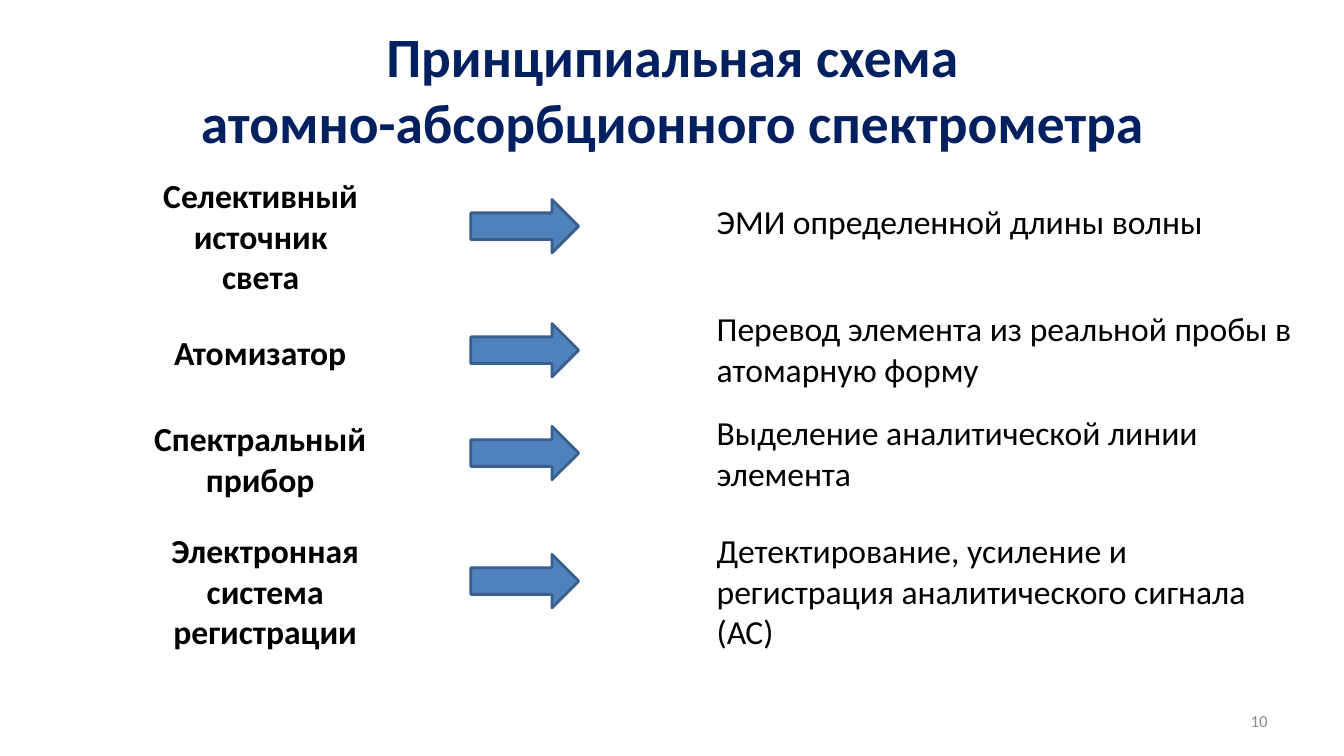
from dataclasses import dataclass

from pptx import Presentation
from pptx.dml.color import RGBColor
from pptx.enum.shapes import MSO_SHAPE
from pptx.enum.text import MSO_ANCHOR, MSO_AUTO_SIZE, PP_ALIGN
from pptx.util import Inches, Pt


@dataclass(frozen=True)
class Theme:
    font: str = "Calibri"
    heading: RGBColor = RGBColor(0x00, 0x20, 0x60)
    text: RGBColor = RGBColor(0x00, 0x00, 0x00)
    muted: RGBColor = RGBColor(0x8C, 0x8C, 0x8C)
    arrow_fill: RGBColor = RGBColor(0x4F, 0x81, 0xBD)
    arrow_line: RGBColor = RGBColor(0x3A, 0x5F, 0x8C)
    title_size: float = 39.6
    body_size: float = 24
    number_size: float = 12


THEME = Theme()

ARROW_LEFT, ARROW_WIDTH, ARROW_HEIGHT = 4.67, 1.07, 0.53
PURPOSE_LEFT = 7.01

# Each row: stage (text, left, top, width, height), arrow top,
# purpose (text, top, width, height, wrap)
STAGES = [
    (("Селективный источник света", 1.42, 1.69, 2.33, 1.31), 1.98,
     ("ЭМИ определенной длины волны", 1.94, 5.07, 0.5, False)),
    (("Атомизатор", 1.37, 3.24, 2.42, 0.5), 3.21,
     ("Перевод элемента из реальной пробы в атомарную форму",
      3.01, 6.04, 0.91, True)),
    (("Спектральный прибор", 1.32, 4.1, 2.52, 0.91), 4.23,
     ("Выделение аналитической линии элемента", 4.04, 5.47, 0.91, True)),
    (("Электронная система регистрации", 1.49, 5.21, 2.28, 1.31), 5.5,
     ("Детектирование, усиление и регистрация аналитического сигнала (АС)",
      5.21, 5.47, 1.31, True)),
]


def style(paragraph, size, color, bold=False, align=PP_ALIGN.LEFT):
    paragraph.alignment = align
    font = paragraph.font
    font.name, font.size, font.bold = THEME.font, Pt(size), bold
    font.color.rgb = color


def set_title(slide, text):
    title = slide.shapes.title
    title.left, title.top = Inches(0.67), Inches(0.25)
    title.width, title.height = Inches(12), Inches(1.25)
    frame = title.text_frame
    frame.text = text
    frame.auto_size = MSO_AUTO_SIZE.NONE
    frame.vertical_anchor = MSO_ANCHOR.MIDDLE
    style(frame.paragraphs[0], THEME.title_size, THEME.heading, True,
          PP_ALIGN.CENTER)


def add_label(slide, text, left, top, width, height, wrap=True,
              bold=False, align=PP_ALIGN.LEFT):
    label = slide.shapes.add_textbox(Inches(left), Inches(top),
                                     Inches(width), Inches(height))
    frame = label.text_frame
    frame.text = text
    frame.word_wrap = wrap
    frame.auto_size = MSO_AUTO_SIZE.SHAPE_TO_FIT_TEXT
    style(frame.paragraphs[0], THEME.body_size, THEME.text, bold, align)


def add_arrow(slide, top):
    arrow = slide.shapes.add_shape(
        MSO_SHAPE.RIGHT_ARROW, Inches(ARROW_LEFT), Inches(top),
        Inches(ARROW_WIDTH), Inches(ARROW_HEIGHT))
    arrow.shadow.inherit = False
    arrow.fill.solid()
    arrow.fill.fore_color.rgb = THEME.arrow_fill
    arrow.line.color.rgb = THEME.arrow_line
    arrow.line.width = Pt(2)


def add_page_number(slide, number):
    page = slide.shapes.add_textbox(Inches(9.56), Inches(6.95),
                                    Inches(3.11), Inches(0.4))
    frame = page.text_frame
    frame.text = number
    frame.word_wrap = True
    frame.vertical_anchor = MSO_ANCHOR.MIDDLE
    style(frame.paragraphs[0], THEME.number_size, THEME.muted,
          align=PP_ALIGN.RIGHT)


def main():
    deck = Presentation()
    deck.slide_width, deck.slide_height = Inches(13.33), Inches(7.5)
    slide = deck.slides.add_slide(deck.slide_layouts.get_by_name("Title Only"))

    set_title(slide, "Принципиальная схема\vатомно-абсорбционного спектрометра")
    add_page_number(slide, "10")

    # One row per stage of the instrument
    for stage, arrow_top, (purpose, top, width, height, wrap) in STAGES:
        add_label(slide, *stage, bold=True, align=PP_ALIGN.CENTER)
        add_arrow(slide, arrow_top)
        add_label(slide, purpose, PURPOSE_LEFT, top, width, height, wrap)

    deck.save("out.pptx")


if __name__ == "__main__":
    main()
